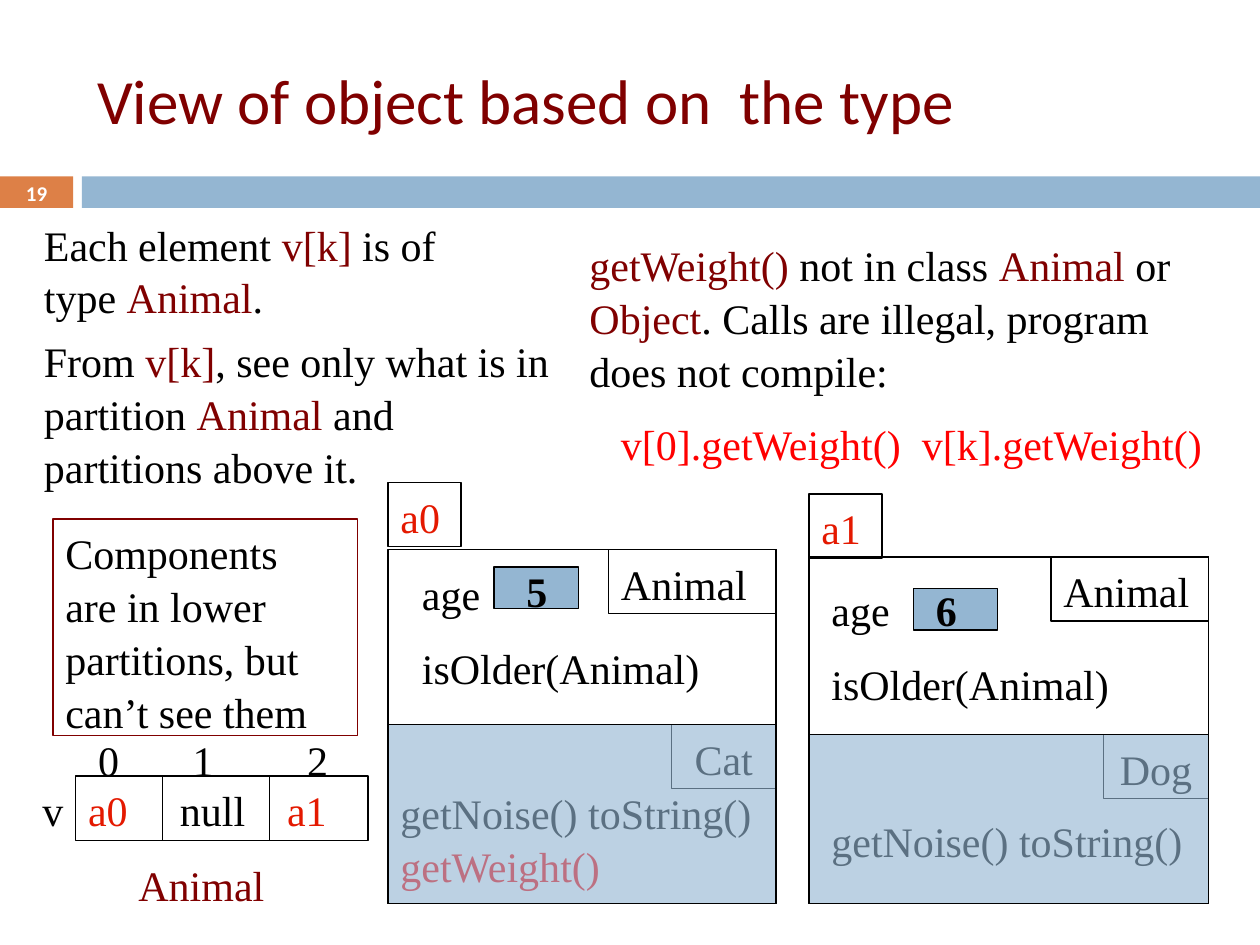
from dataclasses import dataclass

from lxml.etree import SubElement
from pptx import Presentation
from pptx.dml.color import RGBColor
from pptx.enum.shapes import MSO_CONNECTOR as Connector, MSO_SHAPE as Preset
from pptx.enum.text import MSO_ANCHOR as Anchor, PP_ALIGN as Align
from pptx.oxml.ns import qn
from pptx.util import Inches, Pt

SERIF, SANS = "Times New Roman", "Calibri"
BLACK, WHITE, MAROON = "000000", "FFFFFF", "800000"
RED, REFERENCE, BLUE, ORANGE = "FF0000", "E41900", "94B6D2", "DD8047"


@dataclass(frozen=True)
class Words:
    text: str
    color: str = BLACK
    bold: bool = False
    size: int = 24
    font: str = SERIF


@dataclass(frozen=True)
class Line:
    runs: tuple[Words, ...]
    before: int = 0
    indent: float = 0


@dataclass(frozen=True)
class Box:
    left: float
    top: float
    width: float
    height: float

    @property
    def right(self) -> float:
        return self.left + self.width

    @property
    def bottom(self) -> float:
        return self.top + self.height

    def inches(self) -> tuple:
        return tuple(Inches(v) for v in (self.left, self.top, self.width, self.height))


@dataclass(frozen=True)
class ObjectView:
    name: str
    subclass: str
    age: str
    frame: Box
    name_top: float
    type_width: float
    split: float
    split_end: float
    fields: Box
    value: Box
    digit: Box
    methods: Box
    method_lines: tuple[Line, ...]


def rgb(color: str) -> RGBColor:
    return RGBColor.from_string(color)


def line(text: str, color: str = BLACK, before: int = 0) -> Line:
    return Line((Words(text, color),), before)


def write(frame, lines: tuple[Line, ...], align=Align.LEFT, anchor=Anchor.TOP, spacing=1.05) -> None:
    frame.word_wrap = True
    frame.vertical_anchor = anchor
    for index, content in enumerate(lines):
        paragraph = frame.add_paragraph() if index else frame.paragraphs[0]
        paragraph.alignment = align
        paragraph.line_spacing = spacing
        paragraph.space_before = Pt(content.before)
        if content.indent:
            paragraph._p.get_or_add_pPr().set("marL", str(Inches(content.indent)))
        for words in content.runs:
            run = paragraph.add_run()
            run.text = words.text
            run.font.name = words.font
            run.font.size = Pt(words.size)
            run.font.bold = words.bold
            run.font.color.rgb = rgb(words.color)


def add_text(slide, box: Box, *lines: Line, align=Align.LEFT, anchor=Anchor.TOP) -> None:
    write(slide.shapes.add_textbox(*box.inches()).text_frame, lines, align, anchor)


def add_box(slide, box: Box, *lines: Line, fill: str = "", outline: str = BLACK,
            opacity: int = 100, align=Align.LEFT) -> None:
    shape = slide.shapes.add_shape(Preset.RECTANGLE, *box.inches())
    shape.shadow.inherit = False
    if fill:
        shape.fill.solid()
        shape.fill.fore_color.rgb = rgb(fill)
        if opacity < 100:
            tint = shape._element.spPr.find(qn("a:solidFill")).find(qn("a:srgbClr"))
            SubElement(tint, qn("a:alpha")).set("val", str(opacity * 1000))
    else:
        shape.fill.background()
    if outline:
        shape.line.color.rgb = rgb(outline)
        shape.line.width = Pt(0.75)
    else:
        shape.line.fill.background()
    if lines:
        write(shape.text_frame, lines, align)


def add_rule(slide, x1: float, y1: float, x2: float, y2: float) -> None:
    rule = slide.shapes.add_connector(Connector.STRAIGHT, *(Inches(v) for v in (x1, y1, x2, y2)))
    rule.line.color.rgb = rgb(BLACK)
    rule.line.width = Pt(0.75)
    SubElement(rule._element.spPr, qn("a:effectLst"))


def add_object(slide, view: ObjectView) -> None:
    frame = view.frame
    add_box(slide, frame)
    add_box(slide, Box(frame.left, view.name_top, 0.58, 0.51), line(view.name, REFERENCE))
    add_box(slide, Box(frame.right - view.type_width, frame.top, view.type_width, 0.51), line("Animal"))
    add_box(slide, Box(frame.right - 0.83, view.split, 0.83, 0.51), line(view.subclass), align=Align.CENTER)
    add_rule(slide, frame.left, view.split, view.split_end, view.split)
    add_text(slide, view.methods, *view.method_lines)
    add_text(slide, view.fields, line("age"), line("isOlder(Animal)", before=12))
    add_box(slide, view.value, fill=BLUE)
    add_text(slide, view.digit, Line((Words(view.age, bold=True),)))
    hidden_part = Box(frame.left, view.split, frame.width, frame.bottom - view.split)
    add_box(slide, hidden_part, fill=BLUE, opacity=62)


def add_array(slide) -> None:
    array = Box(0.6, 6.16, 2.32, 0.51)
    add_box(slide, array)
    for divider in (1.29, 2.14):
        add_rule(slide, divider, array.top, divider, array.bottom)
    add_text(slide, Box(0.08, array.top, 0.52, 0.5), line("v"), align=Align.RIGHT)
    cells = (("a0", REFERENCE, 0.6), ("null", BLACK, 1.33), ("a1", REFERENCE, 2.18))
    for index, (value, color, left) in enumerate(cells):
        add_text(slide, Box(left, array.top, 0.75, 0.5), line(value, color))
        add_text(slide, Box(left + (0.08, 0.1, 0.16)[index], 5.76, 0.4, 0.5), line(str(index)))
    add_text(slide, Box(1, 6.75, 1.23, 0.5), line("Animal", MAROON))


OBJECTS = (
    ObjectView("a0", "Cat", "5", Box(3.08, 4.36, 3.08, 2.81), 3.83, 1.33, 5.75, 5.5,
               Box(3.25, 4.44, 2.92, 1.11), Box(3.92, 4.5, 0.67, 0.33), Box(4.08, 4.42, 0.33, 0.51),
               Box(3.08, 6.18, 3.08, 0.91),
               (line("getNoise() toString()"), line("getWeight()", RED))),
    ObjectView("a1", "Dog", "6", Box(6.42, 4.42, 3.17, 2.75), 3.92, 1.25, 5.83, 8.92,
               Box(6.5, 4.57, 3.08, 1.11), Box(7.25, 4.67, 0.67, 0.33), Box(7.33, 4.57, 0.33, 0.51),
               Box(6.5, 6.4, 3.08, 0.51),
               (line("getNoise() toString()"),)),
)


def main() -> None:
    deck = Presentation()
    deck.slide_width, deck.slide_height = Inches(10), Inches(7.5)
    slide = deck.slides.add_slide(deck.slide_layouts[5])

    add_box(slide, Box(0, 1.4, 0.58, 0.25), fill=ORANGE, outline="")
    add_box(slide, Box(0.65, 1.4, 9.35, 0.25), fill=BLUE, outline="")
    add_text(slide, Box(0, 1.39, 0.58, 0.27), Line((Words("19", WHITE, True, 12, SANS),)),
             align=Align.CENTER, anchor=Anchor.MIDDLE)

    title = slide.shapes.title
    title.left, title.top, title.width, title.height = Box(0.67, 0.25, 8.92, 1.08).inches()
    heading = Words("View of object based on  the type", MAROON, size=36, font=SANS)
    write(title.text_frame, (Line((heading,)),), anchor=Anchor.MIDDLE, spacing=1.0)

    element, animal = Words("v[k]", MAROON), Words("Animal", MAROON)
    add_text(slide, Box(0.25, 1.67, 4.25, 2.2),
             Line((Words("Each element "), element, Words(" is of"))),
             Line((Words("type "), animal, Words("."))),
             Line((Words("From "), element, Words(", see only what is in partition "),
                   animal, Words(" and partitions above it.")), before=6))
    add_text(slide, Box(4.58, 1.83, 5.17, 1.88),
             Line((Words("getWeight() ", MAROON), Words("not in class "), animal, Words(" or "),
                   Words("Object", MAROON), Words(". Calls are illegal, program does not compile:"))),
             Line((Words("v[0].getWeight()  v[k].getWeight()", RED),), before=12, indent=0.25))

    add_array(slide)
    add_box(slide, Box(0.42, 4.12, 2.42, 1.72), line("Components"),
            line("are in lower partitions, but can’t see them"), outline=MAROON)
    for view in OBJECTS:
        add_object(slide, view)
    deck.save("out.pptx")


if __name__ == "__main__":
    main()
